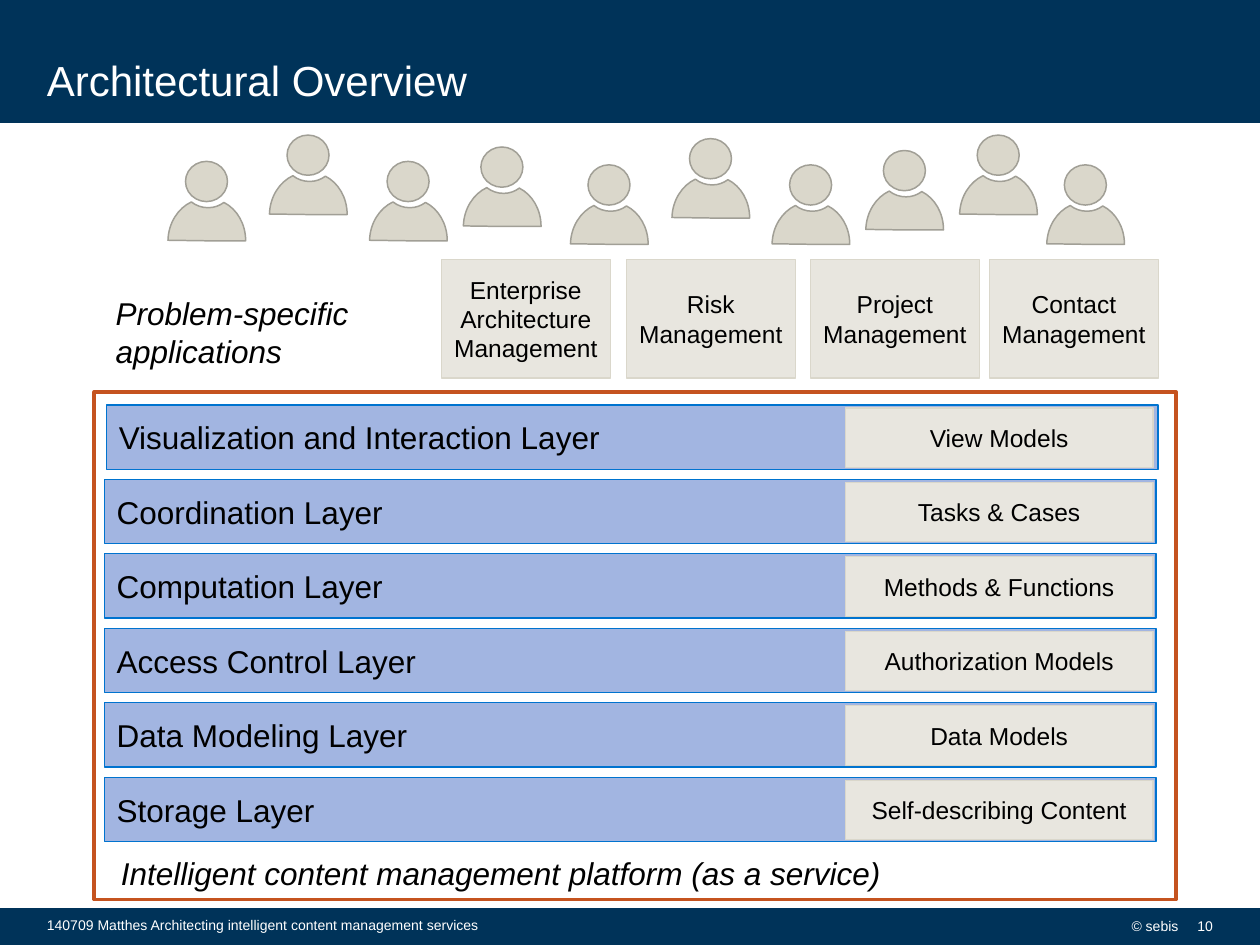
"""Build the Architectural Overview slide."""
from lxml import etree
from pptx import Presentation
from pptx import util as u
from pptx.dml.color import RGBColor
from pptx.enum import shapes, text
from pptx.oxml.ns import qn

Pt = u.Pt
rgb = RGBColor.from_string
RECT, OVAL = shapes.MSO_SHAPE.RECTANGLE, shapes.MSO_SHAPE.OVAL
LEFT, CENTER, RIGHT = text.PP_ALIGN.LEFT, text.PP_ALIGN.CENTER, text.PP_ALIGN.RIGHT
TOP, MIDDLE, BOTTOM = text.MSO_ANCHOR.TOP, text.MSO_ANCHOR.MIDDLE, text.MSO_ANCHOR.BOTTOM
NAVY, WHITE, BLACK = "003359", "FFFFFF", "000000"
SAND, STONE = "E8E6DF", "DAD7CB"


def paint(sp, fill, line, width=0.75):
    sp.shadow.inherit = False
    if fill:
        sp.fill.solid()
        sp.fill.fore_color.rgb = rgb(fill)
    else:
        sp.fill.background()
    sp.line.color.rgb = rgb(line)
    sp.line.width = Pt(width)


def write(sp, words, size=14, color=BLACK, align=LEFT, anchor=MIDDLE,
          italic=False, wrap=True, left=7.2, right=7.2, edge=3.6):
    tf = sp.text_frame
    tf.word_wrap = wrap
    tf.vertical_anchor = anchor
    tf.margin_left, tf.margin_right = Pt(left), Pt(right)
    tf.margin_top = tf.margin_bottom = Pt(edge)
    p = tf.paragraphs[0]
    p.text = words
    p.alignment = align
    for r in p.runs:
        r.font.name = "Arial"
        r.font.size = Pt(size)
        r.font.italic = italic
        r.font.color.rgb = rgb(color)


prs = Presentation()
prs.slide_width, prs.slide_height = Pt(720), Pt(540)
s = prs.slides.add_slide(prs.slide_layouts[6])

for y, h in [(519.4, 20.6), (0.7, 68.8)]:
    sp = s.shapes.add_shape(RECT, Pt(0), Pt(y), Pt(720), Pt(h))
    paint(sp, NAVY, NAVY, 1.35)

sp = s.shapes.add_shape(RECT, Pt(54), Pt(224), Pt(618), Pt(290))
paint(sp, None, "C5531F", 2.25)

footer = dict(size=8, color=WHITE)
platform = dict(size=18, anchor=TOP, italic=True, wrap=False)
labels = [
    (19.7, 3.2, 593.3, 56.9, "Architectural Overview",
     dict(size=24, color=WHITE, anchor=BOTTOM, edge=0)),
    (554.2, 517.3, 126.4, 23, "© sebis", dict(footer, align=RIGHT, wrap=False)),
    (19.7, 517.2, 340.6, 23,
     "140709 Matthes Architecting intelligent content management services", footer),
    (680.4, 517.3, 19.8, 23, "10", dict(footer, align=RIGHT, wrap=False, left=0)),
    (62, 484.5, 453, 29, "Intelligent content management platform (as a service)", platform),
    (59, 164.4, 154, 51, "Problem-specific\vapplications", platform),
]
for x, y, w, h, words, style in labels:
    write(s.shapes.add_textbox(Pt(x), Pt(y), Pt(w), Pt(h)), words, **style)

applications = [
    (252.2, "Enterprise\vArchitecture Management"),
    (357.9, "Risk\vManagement"),
    (463.1, "Project Management"),
    (565.4, "Contact\vManagement"),
]
for x, words in applications:
    sp = s.shapes.add_shape(RECT, Pt(x), Pt(148.2), Pt(96.6), Pt(67.8))
    paint(sp, SAND, STONE)
    write(sp, words, align=CENTER, left=6, right=6)

layers = [
    ("Visualization and Interaction Layer", "View Models"),
    ("Coordination Layer", "Tasks & Cases"),
    ("Computation Layer", "Methods & Functions"),
    ("Access Control Layer", "Authorization Models"),
    ("Data Modeling Layer", "Data Models"),
    ("Storage Layer", "Self-describing Content"),
]
for i, (layer, model) in enumerate(layers):
    y = 231.4 + 42.55 * i
    sp = s.shapes.add_shape(RECT, Pt(59.6 if i else 60.8), Pt(y), Pt(601), Pt(36.8))
    paint(sp, "A2B5E1", "0073CF")
    write(sp, layer, size=18)
    sp = s.shapes.add_shape(RECT, Pt(483.1), Pt(y + 1.7), Pt(175.8), Pt(34))
    paint(sp, SAND, STONE)
    write(sp, model, align=CENTER)

start = (13.4, 23.2)
shoulders = [
    [(16, 25.3), (19.4, 26.5), (23, 26.5)],
    [(26.6, 26.5), (29.5, 25.3), (32, 23.5)],
    [(39.5, 27.3), (44.4, 35.8), (44.4, 45.4)],
    [(22.2, 45.4)],
    [(0, 45.1)],
    [(0.3, 35.3), (5.7, 26.8), start],
]
people = [(96, 92.2), (154, 77.2), (211.2, 92.2), (264.8, 84), (326, 94.2),
          (384, 79.2), (441.2, 94.2), (494.8, 86), (548.4, 77.2), (598.2, 94.2)]
for x, y in people:
    person = s.shapes.add_group_shape().shapes
    head = person.add_shape(OVAL, Pt(x + 10), Pt(y), Pt(24), Pt(23))
    fb = person.build_freeform(Pt(x + start[0]), Pt(y + start[1]))
    fb.add_line_segments([(Pt(x + dx), Pt(y + dy)) for part in shoulders for dx, dy in part])
    body = fb.convert_to_shape()
    outline = next(body._element.iter(qn("a:path")))
    lines = iter(outline.findall(qn("a:lnTo")))
    for part in shoulders:
        segment = etree.SubElement(outline, qn("a:cubicBezTo" if len(part) == 3 else "a:lnTo"))
        for _ in part:
            line = next(lines)
            segment.append(line[0])
            outline.remove(line)
    etree.SubElement(outline, qn("a:close"))
    for sp in (head, body):
        paint(sp, STONE, "A19F96", 0.85)

prs.save("out.pptx")
